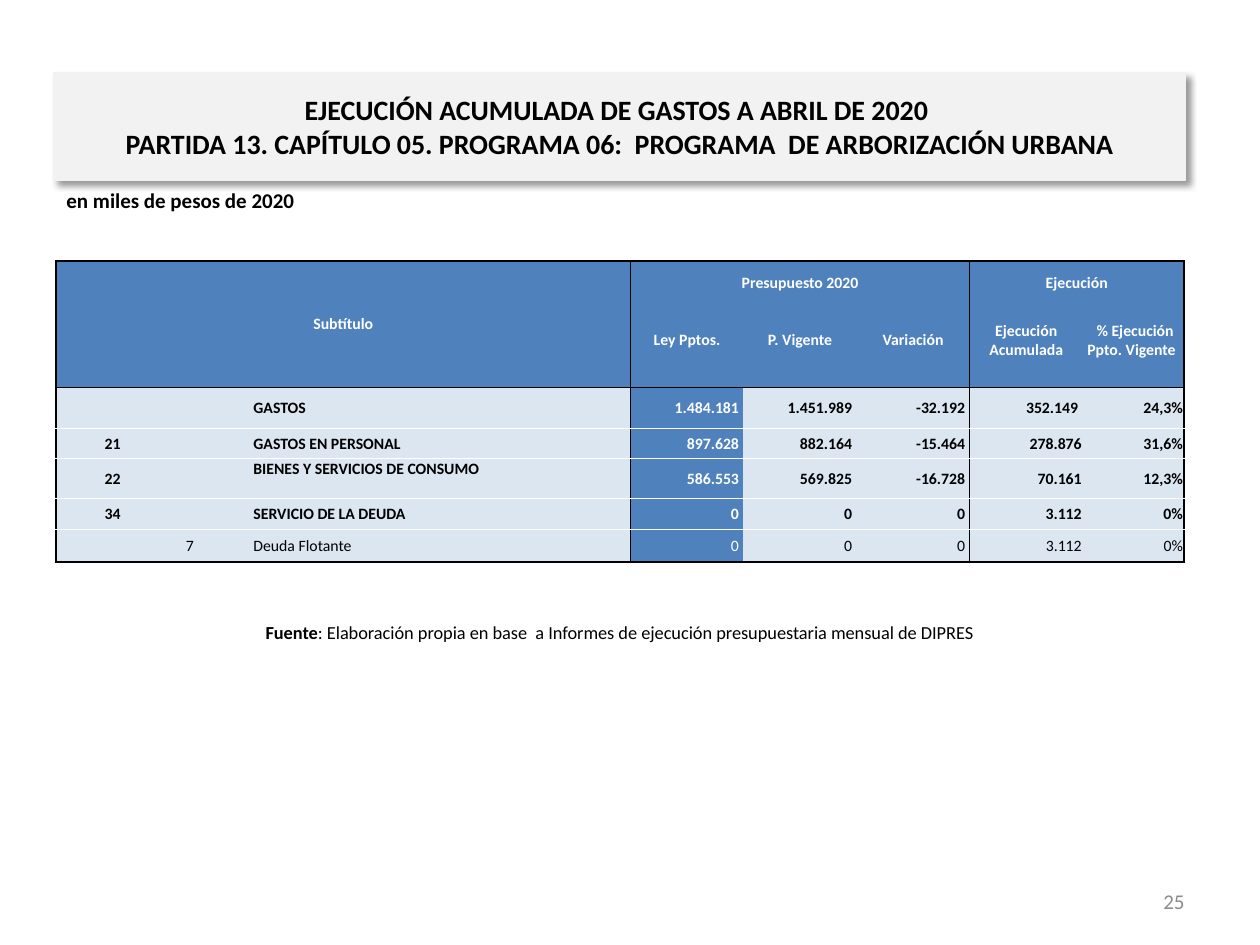
"""Build the slide on accumulated spending of the urban tree programme, April 2020."""
from lxml import etree
from pptx import Presentation
from pptx import util as u
from pptx.dml.color import RGBColor
from pptx.enum import shapes, text
from pptx.oxml import ns, parse_xml

THEME = {
    "font": "Calibri", "black": "000000", "white": "FFFFFF", "grey": "8C8C8C",
    "panel": "F2F2F2", "blue": "4F81BD", "pale": "DCE6F1",
    "title": 16, "note": 12, "source": 10.5, "table": 9,
}
TITLE = ("EJECUCIÓN ACUMULADA DE GASTOS A ABRIL DE 2020 \v"
         "PARTIDA 13. CAPÍTULO 05. PROGRAMA 06:  PROGRAMA  DE ARBORIZACIÓN URBANA")
UNITS = "en miles de pesos de 2020"
SOURCE = [("Fuente", True),
          (": Elaboración propia en base  a Informes de ejecución presupuestaria mensual de DIPRES", False)]
PAGE_NUMBER = "25"

HEADER_ROWS = 2
ROWS = [
    ["Subtítulo", "", "", "", "Presupuesto 2020", "", "", "Ejecución", ""],
    ["", "", "", "", "Ley Pptos.", "P. Vigente", "Variación",
     "Ejecución Acumulada", " % Ejecución Ppto. Vigente "],
    ["", "", "", "GASTOS", "1.484.181 ", "1.451.989 ", "-32.192 ", "352.149 ", "24,3%"],
    ["21", "", "", "GASTOS EN PERSONAL", "897.628 ", "882.164 ", "-15.464 ", "278.876", "31,6%"],
    ["22", "", "", "BIENES Y SERVICIOS DE CONSUMO", "586.553 ", "569.825 ", "-16.728 ", "70.161", "12,3%"],
    ["34", "", "", "SERVICIO DE LA DEUDA", "0 ", "0 ", "0 ", "3.112", "0%"],
    ["", "7", "", "Deuda Flotante", "0 ", "0 ", "0 ", "3.112", "0%"],
]
MERGES = [((0, 0), (1, 3)), ((0, 4), (0, 6)), ((0, 7), (0, 8))]
WIDTHS = [2.28, 0.84, 0.84, 7.62, 2.28, 2.28, 2.28, 2.28, 2.04]
HEIGHTS = [0.64, 1.9, 0.83, 0.61, 0.8, 0.63, 0.66]
TOP_ALIGNED = (4, 3)
LAW_COLUMN = 4
VERTICAL_RULES = {0: ("black", 1), 4: ("black", 0.5), 7: ("black", 0.5), 9: ("black", 1)}
HORIZONTAL_RULES = {0: ("black", 1), 2: ("black", 0.5), 7: ("black", 1),
                    **{row: ("white", 0.5) for row in range(3, 7)}}
PLAIN_TABLE = "{2D5ABB26-0587-4C30-8999-92F81FD0307C}"


def color(name):
    return RGBColor.from_string(THEME[name])


def style(font, size, shade, bold=None):
    font.name, font.size, font.bold = THEME["font"], u.Pt(THEME[size]), bold
    font.color.rgb = color(shade)


def write(box, spans, size, shade, align, anchor=text.MSO_ANCHOR.MIDDLE, bold=None):
    frame = box.text_frame
    frame.word_wrap, frame.vertical_anchor = True, anchor
    para = frame.paragraphs[0]
    para.alignment = align
    style(para.font, size, shade, bold)
    if isinstance(spans, str):
        para.text = spans
        return
    for words, heavy in spans:
        span = para.add_run()
        span.text, span.font.bold = words, heavy


def add_title(page):
    box = page.shapes.add_shape(shapes.MSO_SHAPE.RECTANGLE,
                                u.Cm(1.09), u.Cm(1.47), u.Cm(22.81), u.Cm(2.16))
    box.fill.solid()
    box.fill.fore_color.rgb = box.line.color.rgb = color("panel")
    box.line.width = u.Pt(0.75)
    box.shadow.inherit = False
    effects = box.element.spPr.find(ns.qn("a:effectLst"))
    effects.append(parse_xml(
        f'<a:outerShdw {ns.nsdecls("a")} blurRad="{u.Pt(4)}" dist="{u.Pt(3)}" dir="2700000" '
        f'algn="tl" rotWithShape="0"><a:srgbClr val="{THEME["black"]}">'
        '<a:alpha val="40000"/></a:srgbClr></a:outerShdw>'))
    write(box, TITLE, "title", "black", text.PP_ALIGN.CENTER, bold=True)


def draw_border(cell, side, rule):
    properties = cell._tc.get_or_add_tcPr()
    line = etree.SubElement(properties, ns.qn(f"a:ln{side}"))
    if rule is None:
        line.set("w", "0")
        etree.SubElement(line, ns.qn("a:noFill"))
        return
    shade, points = rule
    line.set("w", str(u.Pt(points)))
    fill = etree.SubElement(line, ns.qn("a:solidFill"))
    etree.SubElement(fill, ns.qn("a:srgbClr")).set("val", THEME[shade])


def fill_cell(cell, row, column):
    head = row < HEADER_ROWS
    blue = head or column == LAW_COLUMN
    for side, rules, edge in (("L", VERTICAL_RULES, column),
                              ("R", VERTICAL_RULES, column + cell.span_width),
                              ("T", HORIZONTAL_RULES, row),
                              ("B", HORIZONTAL_RULES, row + cell.span_height)):
        draw_border(cell, side, rules.get(edge))
    cell.fill.solid()
    cell.fill.fore_color.rgb = color("blue" if blue else "pale")
    cell.margin_left = cell.margin_right = cell.margin_top = u.Cm(0.02)
    cell.margin_bottom = 0
    anchor = text.MSO_ANCHOR.MIDDLE
    if (row, column) == TOP_ALIGNED:
        anchor = text.MSO_ANCHOR.TOP
    elif row == 0 and column > 0:
        anchor = text.MSO_ANCHOR.BOTTOM
    cell.vertical_anchor = anchor
    para = cell.text_frame.paragraphs[0]
    if head or column < 3:
        para.alignment = text.PP_ALIGN.CENTER
    else:
        para.alignment = text.PP_ALIGN.JUSTIFY if column == 3 else text.PP_ALIGN.RIGHT
    style(para.font, "table", "white" if blue else "black", row < len(ROWS) - 1)
    if ROWS[row][column]:
        para.text = ROWS[row][column]
    else:
        para._p.get_or_add_endParaRPr().set("sz", str(THEME["table"] * 100))


def add_budget_table(page):
    frame = page.shapes.add_table(len(ROWS), len(WIDTHS), u.Cm(1.13), u.Cm(5.26),
                                  u.Cm(sum(WIDTHS)), u.Cm(sum(HEIGHTS)))
    table = frame.table
    table.first_row = table.horz_banding = False
    table._tbl.tblPr.find(ns.qn("a:tableStyleId")).text = PLAIN_TABLE
    for column, width in zip(table.columns, WIDTHS):
        column.width = u.Cm(width)
    for row, height in zip(table.rows, HEIGHTS):
        row.height = u.Cm(height)
    for first, last in MERGES:
        table.cell(*first).merge(table.cell(*last))
    for row in range(len(ROWS)):
        for column in range(len(WIDTHS)):
            fill_cell(table.cell(row, column), row, column)


def main():
    deck = Presentation()
    deck.slide_width, deck.slide_height = u.Cm(25.4), u.Cm(19.05)
    page = deck.slides.add_slide(deck.slide_layouts[6])
    align, anchor = text.PP_ALIGN, text.MSO_ANCHOR
    labels = [
        ((1.09, 12.32, 22.81, 0.86), SOURCE, "source", "black", align.CENTER, anchor.MIDDLE, None),
        ((18.21, 17.65, 5.92, 1.02), PAGE_NUMBER, "note", "grey", align.RIGHT, anchor.MIDDLE, None),
        ((1.09, 3.66, 20.8, 0.86), UNITS, "note", "black", align.LEFT, anchor.TOP, True),
    ]
    for place, *content in labels:
        write(page.shapes.add_textbox(*map(u.Cm, place)), *content)
    add_title(page)
    add_budget_table(page)
    deck.save("out.pptx")


if __name__ == "__main__":
    main()
